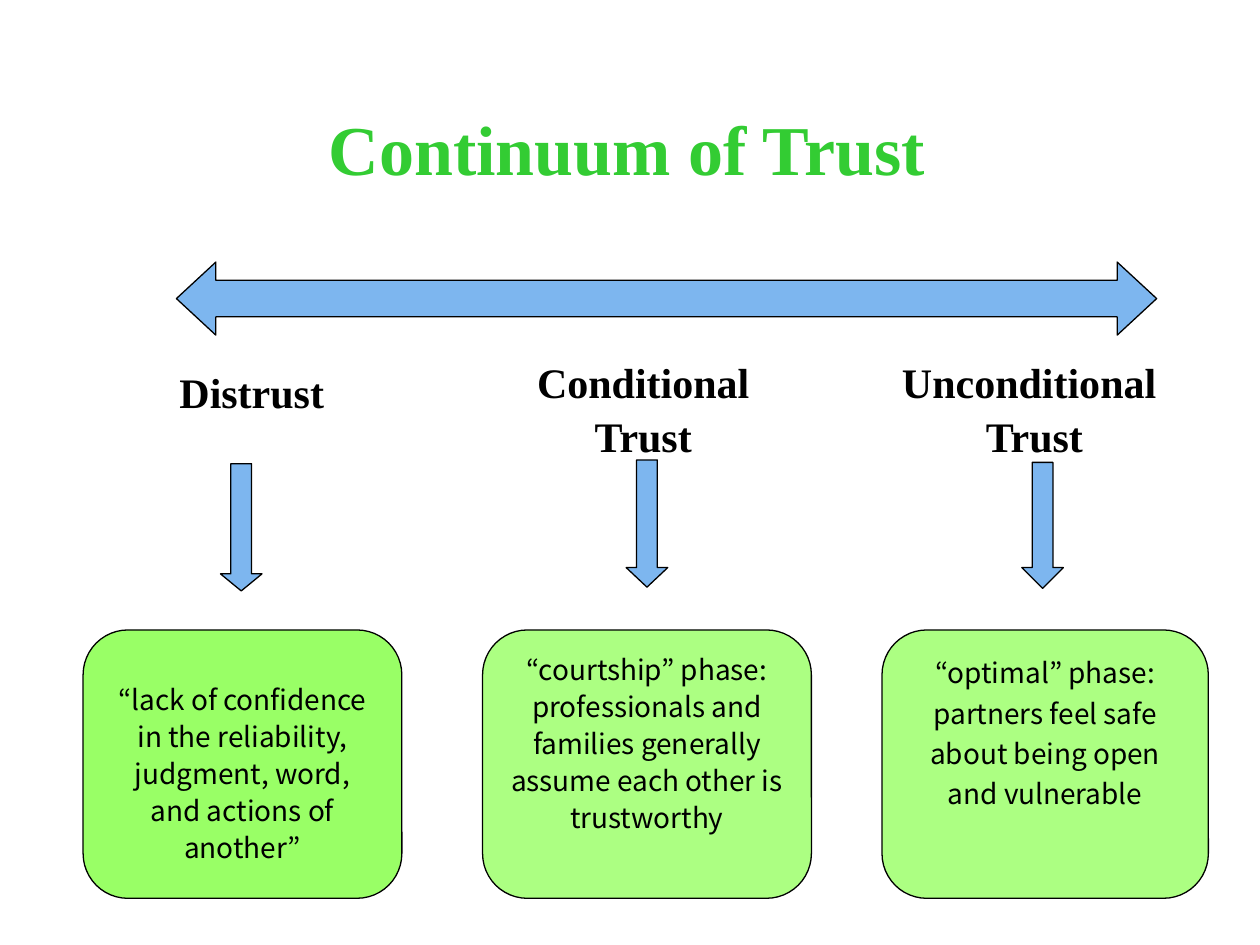
import pptx
import pptx.util
import pptx.dml.color
import pptx.oxml.ns
import lxml.etree
from pptx.enum.shapes import MSO_SHAPE
from pptx.enum.text import MSO_ANCHOR, MSO_AUTO_SIZE, PP_ALIGN

Inches = pptx.util.Inches
Pt = pptx.util.Pt

SERIF, SANS = "Times New Roman", "Noto Sans CJK JP"
BLACK, GREEN, BLUE, LIME = "000000", "33CC33", "7DB6EF", "99FF66"

# Each stage: label lines and box, arrow box and head, card box, fill opacity,
# top inset, line spacing and text
STAGES = [
    (["Distrust "], (1.33, 2.83, 1.42, 0.83),
     (1.75, 3.68, 0.33, 1.01), 0.41,
     (0.66, 5, 2.53, 2.13), 100, 0.29, 1.1,
     "“lack of confidence in the reliability, judgment, word, and actions of another”"),
    (["Conditional", "Trust"], (4.16, 2.75, 1.89, 0.9),
     (4.97, 3.65, 0.33, 1.01), 0.47,
     (3.83, 5, 2.61, 2.13), 81, 0.05, 1.1,
     "“courtship” phase: professionals and families generally assume each other is trustworthy"),
    (["Unconditional ", "Trust"], (7.06, 2.75, 2.3, 0.9),
     (8.11, 3.67, 0.33, 1), 0.5,
     (7, 5, 2.59, 2.13), 81, 0.05, 1.2,
     "“optimal” phase: partners feel safe about being open and vulnerable"),
]


def rgb(color):
    return pptx.dml.color.RGBColor.from_string(color)


def write(tf, lines, font, size, color=BLACK, bold=False, spacing=1.0, wrap=True):
    """Fill a text frame with centred, top-anchored paragraphs."""
    tf.word_wrap = wrap
    tf.auto_size = MSO_AUTO_SIZE.NONE
    tf.vertical_anchor = MSO_ANCHOR.TOP
    for i, line in enumerate(lines):
        p = tf.add_paragraph() if i else tf.paragraphs[0]
        p.text = line
        p.alignment = PP_ALIGN.CENTER
        p.line_spacing = spacing
        p.font.name = font
        p.font.size = Pt(size)
        p.font.bold = bold
        p.font.color.rgb = rgb(color)


def add_shape(s, kind, box, fill, adjustments, opacity=100):
    sp = s.shapes.add_shape(kind, *map(Inches, box))
    sp.shadow.inherit = False
    for i, value in enumerate(adjustments):
        sp.adjustments[i] = value
    sp.fill.solid()
    sp.fill.fore_color.rgb = rgb(fill)
    if opacity < 100:
        clr = sp.fill._xPr.find(".//" + pptx.oxml.ns.qn("a:srgbClr"))
        lxml.etree.SubElement(clr, pptx.oxml.ns.qn("a:alpha"), val=str(opacity * 1000))
    sp.line.color.rgb = rgb(BLACK)
    sp.line.width = Pt(0.75)
    return sp


def add_title(s, box, text):
    sp = s.shapes.title
    sp.left, sp.top, sp.width, sp.height = map(Inches, box)
    write(sp.text_frame, [text], SERIF, 40, GREEN, bold=True)


def add_label(s, box, lines):
    sp = s.shapes.add_textbox(*map(Inches, box))
    write(sp.text_frame, lines, SERIF, 24, bold=True, spacing=1.07, wrap=False)


def add_card(s, box, text, opacity, inset, spacing):
    sp = add_shape(s, MSO_SHAPE.ROUNDED_RECTANGLE, box, LIME, [0.167], opacity)
    write(sp.text_frame, [text], SANS, 16, spacing=spacing)
    sp.text_frame.margin_top = Inches(inset)


def main():
    prs = pptx.Presentation()
    prs.slide_width, prs.slide_height = Inches(10), Inches(7.5)
    s = prs.slides.add_slide(prs.slide_layouts[5])
    add_title(s, (0, 0.79, 9.95, 1.37), "Continuum of Trust")
    add_shape(s, MSO_SHAPE.LEFT_RIGHT_ARROW, (1.4, 2.08, 7.78, 0.58), BLUE, [0.5, 0.54])
    for label, label_box, arrow_box, head, card_box, opacity, inset, spacing, text in STAGES:
        add_label(s, label_box, label)
        add_shape(s, MSO_SHAPE.DOWN_ARROW, arrow_box, BLUE, [0.5, head])
        add_card(s, card_box, text, opacity, inset, spacing)
    prs.save("out.pptx")


if __name__ == "__main__":
    main()
